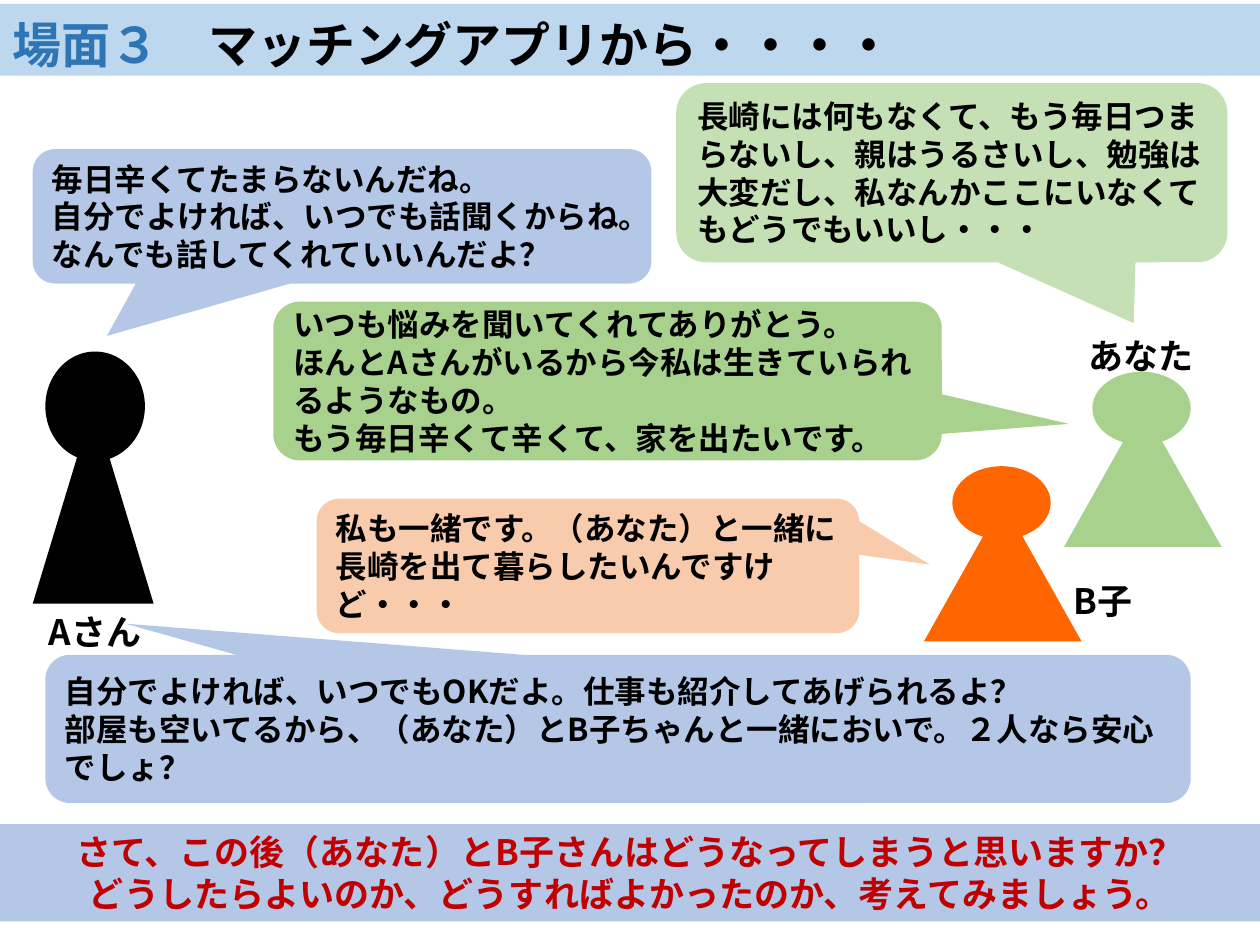
"""Build the scene 3 slide: a chat between A-san, you and B-ko."""
from lxml import etree
from pptx import Presentation
from pptx.dml.color import RGBColor
from pptx.enum import shapes, text
from pptx.oxml import ns
from pptx.util import Pt

FONT = "Noto Sans CJK JP"
BLACK = RGBColor(0x00, 0x00, 0x00)
RED = RGBColor(0xC0, 0x00, 0x00)
BLUE = RGBColor(0x2E, 0x75, 0xB6)
SKY = RGBColor(0xBD, 0xD7, 0xEE)
PERIWINKLE = RGBColor(0xB4, 0xC7, 0xE7)
GREEN = RGBColor(0xA9, 0xD1, 0x8E)
PALE_GREEN = RGBColor(0xC5, 0xE0, 0xB4)
ORANGE = RGBColor(0xFF, 0x66, 0x00)
PEACH = RGBColor(0xF8, 0xCB, 0xAD)


def write(shape, paragraphs, size, align, anchor):
    frame = shape.text_frame
    frame.word_wrap = True
    frame.auto_size = text.MSO_AUTO_SIZE.NONE
    frame.vertical_anchor = anchor
    for index, runs in enumerate(paragraphs):
        paragraph = frame.add_paragraph() if index else frame.paragraphs[0]
        paragraph.alignment = align
        paragraph.line_spacing = Pt(size * 1.2)
        for words, color in runs:
            run = paragraph.add_run()
            run.text = words
            run.font.name = FONT
            run.font.size = Pt(size)
            run.font.bold = True
            run.font.color.rgb = color
            east_asian = etree.SubElement(run.font._element, ns.qn("a:ea"))
            east_asian.set("typeface", FONT)


def add_filled(parent, kind, box, color):
    shape = parent.add_shape(kind, *map(Pt, box))
    shape.shadow.inherit = False
    shape.fill.solid()
    shape.fill.fore_color.rgb = color
    shape.line.fill.background()
    return shape


LEFT, CENTER = text.PP_ALIGN.LEFT, text.PP_ALIGN.CENTER
TOP, MIDDLE = text.MSO_ANCHOR.TOP, text.MSO_ANCHOR.MIDDLE

presentation = Presentation()
presentation.slide_width = Pt(720)
presentation.slide_height = Pt(540)
slide = presentation.slides.add_slide(presentation.slide_layouts[5])

title = slide.shapes.title
title.left, title.top, title.width, title.height = map(Pt, (0, 2.2, 720, 41))
title.fill.solid()
title.fill.fore_color.rgb = SKY
write(title, [[("場面３　", BLUE), ("マッチングアプリから・・・・", BLACK)]], 28, LEFT, TOP)
title.text_frame.margin_top = Pt(6)

figures = [
    ((18.7, 231, 69.1, 114), (25.9, 200.9, 56.9, 62.6), BLACK),
    ((528, 286.5, 90, 80), (544.2, 266.4, 56.2, 41.8), ORANGE),
    ((608, 232.5, 90, 80), (624.2, 212.4, 56.2, 41.8), GREEN),
]
for body_box, head_box, color in figures:
    figure = slide.shapes.add_group_shape()
    add_filled(figure.shapes, shapes.MSO_SHAPE.ISOSCELES_TRIANGLE, body_box, color)
    add_filled(figure.shapes, shapes.MSO_SHAPE.OVAL, head_box, color)

callouts = [
    ((156.2, 172.4, 382, 90.7), (0.69, 0.27), GREEN,
     ["いつも悩みを聞いてくれてありがとう。",
      "ほんとAさんがいるから今私は生きていられるようなもの。",
      "もう毎日辛くて辛くて、家を出たいです。"]),
    ((18.7, 85.2, 353.5, 76.8), (-0.38, 0.89), PERIWINKLE,
     ["毎日辛くてたまらないんだね。",
      "自分でよければ、いつでも話聞くからね。なんでも話してくれていいんだよ？"]),
    ((181, 285, 310, 76.8), (0.63, -0.01), PEACH,
     ["私も一緒です。（あなた）と一緒に長崎を出て暮らしたいんですけど・・・"]),
    ((25.9, 374.2, 654.5, 84.7), (-0.43, -0.71), PERIWINKLE,
     ["自分でよければ、いつでもOKだよ。仕事も紹介してあげられるよ？",
      "部屋も空いてるから、（あなた）とB子ちゃんと一緒においで。２人なら安心でしょ？"]),
    ((386.4, 47.5, 315, 102.4), (0.33, 0.84), PALE_GREEN,
     ["長崎には何もなくて、もう毎日つまらないし、親はうるさいし、勉強は"
      "大変だし、私なんかここにいなくてもどうでもいいし・・・"]),
]
for box, tip, color, lines in callouts:
    callout = add_filled(slide.shapes, shapes.MSO_SHAPE.ROUNDED_RECTANGULAR_CALLOUT, box, color)
    callout.adjustments[0], callout.adjustments[1] = tip
    write(callout, [[(line, BLACK)] for line in lines], 18, LEFT, MIDDLE)

for name, left, top in [("あなた", 606.2, 187.5), ("B子", 584.6, 327.5), ("Aさん", 8.6, 345.5)]:
    label = slide.shapes.add_textbox(Pt(left), Pt(top), Pt(91.4), Pt(31.5))
    write(label, [[(name, BLACK)]], 20, CENTER, TOP)

question = add_filled(slide.shapes, shapes.MSO_SHAPE.RECTANGLE, (0, 470.9, 720, 55.7), PERIWINKLE)
write(question, [
    [("さて、この後（あなた）とB子さんはどうなってしまうと思いますか？", RED)],
    [("どうしたらよいのか、どうすればよかったのか、考えてみましょう。", RED)],
], 20, CENTER, MIDDLE)

presentation.save("out.pptx")
